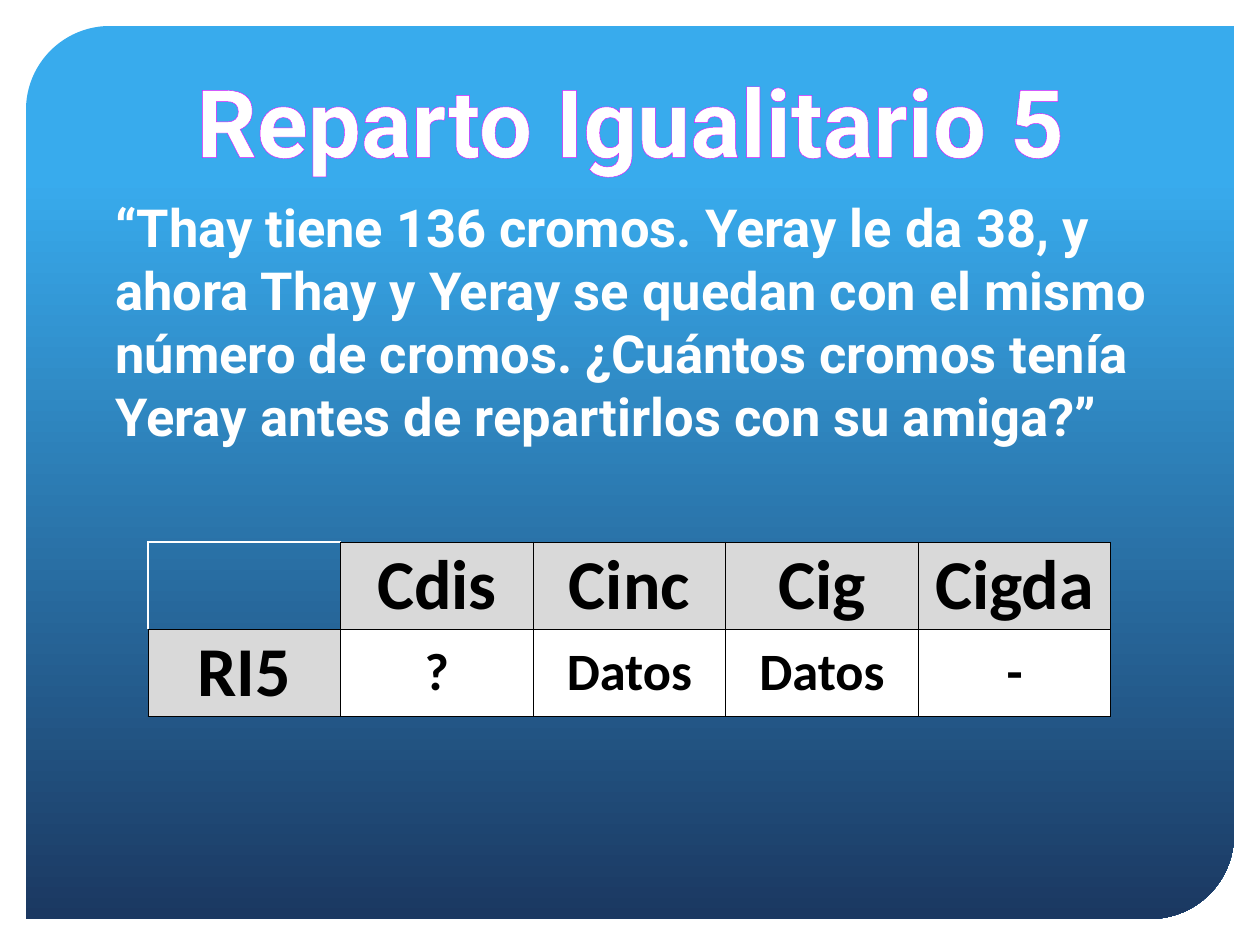
from dataclasses import dataclass

from lxml import etree
from pptx import Presentation
from pptx.dml.color import RGBColor
from pptx.enum.shapes import MSO_SHAPE
from pptx.enum.text import MSO_ANCHOR, MSO_AUTO_SIZE, PP_ALIGN
from pptx.oxml.ns import qn
from pptx.util import Emu, Pt

PANEL = MSO_SHAPE.ROUND_2_DIAG_RECTANGLE
MIDDLE = MSO_ANCHOR.MIDDLE
GROW = MSO_AUTO_SIZE.SHAPE_TO_FIT_TEXT
LEFT, CENTER = PP_ALIGN.LEFT, PP_ALIGN.CENTER
EMU_PER_PX = 914400 / 126


def px(length):
    return Emu(round(length * EMU_PER_PX))


@dataclass(frozen=True)
class Theme:
    sky: str = "38ABED"
    navy: str = "1B3861"
    white: str = "FFFFFF"
    black: str = "000000"
    grey: str = "D9D9D9"
    magenta: str = "E113FF"
    text_font: str = "Roboto"
    table_font: str = "Calibri"
    title_size: int = 54
    body_size: int = 30
    heading_size: int = 40
    value_size: int = 30
    title_outline: float = 1
    border: float = 0.5


class SlideBuilder:
    def __init__(self, slide, theme):
        self.slide = slide
        self.theme = theme

    def set_text(self, frame, text, font_name, size, color, align):
        paragraph = frame.paragraphs[0]
        run = paragraph.add_run()
        run.text = text
        paragraph.alignment = align
        font = paragraph.font
        font.name = font_name
        font.size = Pt(size)
        font.bold = True
        font.color.rgb = RGBColor.from_string(color)
        return run

    def solid_line(self, parent, tag, color, width):
        line = etree.SubElement(parent, qn(tag), w=str(Pt(width)))
        fill = etree.SubElement(line, qn("a:solidFill"))
        etree.SubElement(fill, qn("a:srgbClr"), val=color)

    def panel(self, left, top, width, height):
        panel = self.slide.shapes.add_shape(
            PANEL, px(left), px(top), px(width), px(height))
        panel.shadow.inherit = False
        panel.adjustments[0] = 0.094
        panel.adjustments[1] = 0
        panel.line.fill.background()
        panel.fill.gradient()
        panel.fill.gradient_angle = 270
        stops = ((0.17, self.theme.sky), (1, self.theme.navy))
        for stop, (position, color) in zip(panel.fill.gradient_stops, stops):
            stop.position = position
            stop.color.rgb = RGBColor.from_string(color)

    def text(self, text, left, top, width, height, size,
             align=LEFT, wrap=True, outline=None):
        box = self.slide.shapes.add_textbox(
            px(left), px(top), px(width), px(height))
        frame = box.text_frame
        frame.word_wrap = wrap
        frame.auto_size = GROW
        run = self.set_text(frame, text, self.theme.text_font, size,
                            self.theme.white, align)
        if outline:
            self.solid_line(run.font._element, "a:ln", outline,
                            self.theme.title_outline)

    def cell(self, cell, text, is_heading):
        theme = self.theme
        properties = cell._tc.get_or_add_tcPr()
        for side in "LRTB" if text else "RB":
            self.solid_line(properties, f"a:ln{side}", theme.black, theme.border)
        if not text:
            cell.fill.background()
            return
        cell.fill.solid()
        cell.fill.fore_color.rgb = RGBColor.from_string(
            theme.grey if is_heading else theme.white)
        cell.vertical_anchor = MIDDLE
        cell.margin_left = cell.margin_right = cell.margin_top = px(1)
        cell.margin_bottom = 0
        size = theme.heading_size if is_heading else theme.value_size
        self.set_text(cell.text_frame, text, theme.table_font, size,
                      theme.black, CENTER)

    def table(self, rows, left, top, width, height):
        table = self.slide.shapes.add_table(
            len(rows), len(rows[0]),
            px(left), px(top), px(width), px(height)).table
        table.first_row = False
        table.horz_banding = False
        for r, row in enumerate(rows):
            for c, text in enumerate(row):
                self.cell(table.cell(r, c), text, r == 0 or c == 0)


def main():
    theme = Theme()
    deck = Presentation()
    deck.slide_width, deck.slide_height = px(1260), px(945)
    builder = SlideBuilder(deck.slides.add_slide(deck.slide_layouts[6]), theme)

    builder.panel(26, 26, 1208, 893)
    builder.text("Reparto Igualitario 5", 160, 57, 941, 127, theme.title_size,
                 align=CENTER, wrap=False, outline=theme.magenta)
    builder.table([
        ["", "Cdis", "Cinc", "Cig", "Cigda"],
        ["RI5", "?", "Datos", "Datos", "-"],
    ], 148, 542, 963, 174)
    builder.text(
        "“Thay tiene 136 cromos. Yeray le da 38, y ahora Thay y Yeray se "
        "quedan con el mismo número de cromos. ¿Cuántos cromos tenía Yeray "
        "antes de repartirlos con su amiga?”",
        103, 189, 1062, 331, theme.body_size)

    deck.save("out.pptx")


if __name__ == "__main__":
    main()
